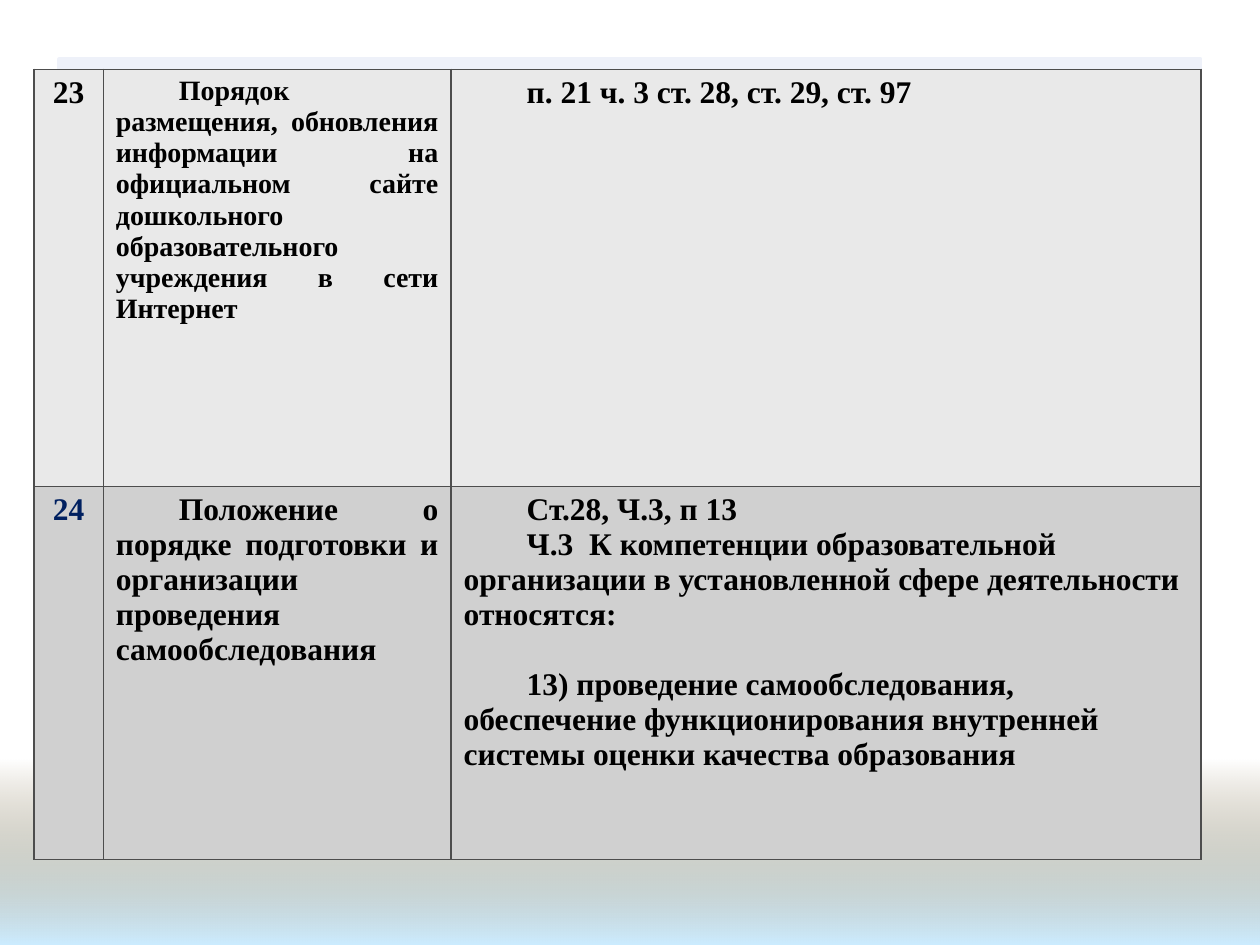
from dataclasses import dataclass

import pptx
import pptx.dml.color
import pptx.enum.dml
import pptx.enum.shapes
import pptx.enum.text
import pptx.oxml
import pptx.oxml.ns
import pptx.util
from pptx.util import Inches

CENTER = pptx.enum.text.PP_ALIGN.CENTER
JUSTIFY = pptx.enum.text.PP_ALIGN.JUSTIFY
LEFT = pptx.enum.text.PP_ALIGN.LEFT
SHAPES = pptx.enum.shapes.MSO_SHAPE


@dataclass
class Entry:
    text: str
    align: int = JUSTIFY
    size: int = 18
    color: str = "000000"
    indent: float = 0.5
    before: int = 0


@dataclass
class Regulation:
    height: float
    fill: str
    cells: list[list[Entry]]


COLUMN_WIDTHS = [0.55, 2.76, 5.95]
REGULATIONS = [
    Regulation(3.31, "E9E9E9", [
        [Entry("23", CENTER, indent=0)],
        [Entry("Порядок размещения, обновления информации на официальном сайте "
               "дошкольного образовательного учреждения в сети Интернет", size=16)],
        [Entry("п. 21 ч. 3 ст. 28, ст. 29, ст. 97")],
    ]),
    Regulation(2.96, "D0D0D0", [
        [Entry("24", CENTER, color="002060", indent=0)],
        [Entry("Положение о порядке подготовки и организации проведения самообследования")],
        [Entry("Ст.28, Ч.3, п 13"),
         Entry("Ч.3  К компетенции образовательной организации в установленной "
               "сфере деятельности относятся:", LEFT),
         Entry("13) проведение самообследования, обеспечение функционирования "
               "внутренней системы оценки качества образования", LEFT, before=20)],
    ]),
]


def rgb(value: str) -> pptx.dml.color.RGBColor:
    return pptx.dml.color.RGBColor.from_string(value)


def draw_horizon(slide) -> None:
    horizon = slide.shapes.add_shape(
        SHAPES.RECTANGLE, 0, Inches(6.03), Inches(10), Inches(1.47))
    horizon.shadow.inherit = False
    horizon.line.fill.background()
    horizon.fill.gradient()
    horizon.fill.gradient_angle = 270
    for stop, color, position in zip(
            horizon.fill.gradient_stops, ("765E2F", "CCECFF"), (0, 1)):
        stop.color.rgb = rgb(color)
        stop.position = position
    top_color = next(horizon._element.iter(pptx.oxml.ns.qn("a:srgbClr")))
    top_color.append(pptx.oxml.parse_xml(
        f'<a:alpha {pptx.oxml.ns.nsdecls("a")} val="0"/>'))


def draw_panel(slide) -> None:
    panel = slide.shapes.add_shape(
        SHAPES.FLOWCHART_PROCESS, Inches(0.47), Inches(0.47), Inches(9.06), Inches(6.25))
    panel.shadow.inherit = False
    panel.fill.solid()
    panel.fill.fore_color.rgb = rgb("EEF1F9")
    panel.line.color.rgb = rgb("EEF1F9")
    panel.line.width = pptx.util.Pt(2)


def add_borders(cell, color: str) -> None:
    properties = cell._tc.get_or_add_tcPr()
    for index, side in enumerate(("lnL", "lnR", "lnT", "lnB")):
        properties.insert(index, pptx.oxml.parse_xml(
            f'<a:{side} {pptx.oxml.ns.nsdecls("a")} w="12700"><a:solidFill>'
            f'<a:srgbClr val="{color}"/></a:solidFill></a:{side}>'))


def write_entry(paragraph, entry: Entry) -> None:
    paragraph.text = entry.text
    paragraph.alignment = entry.align
    if entry.before:
        paragraph.space_before = pptx.util.Pt(entry.before)
    properties = paragraph._p.get_or_add_pPr()
    properties.set("marL", "0")
    properties.set("indent", str(Inches(entry.indent)))
    for run in paragraph.runs:
        run.font.name = "Times New Roman"
        run.font.size = pptx.util.Pt(entry.size)
        run.font.bold = True
        run.font.color.rgb = rgb(entry.color)


def draw_regulations(slide, regulations: list[Regulation]) -> None:
    table = slide.shapes.add_table(
        len(regulations), len(COLUMN_WIDTHS), Inches(0.27), Inches(0.55),
        Inches(sum(COLUMN_WIDTHS)), Inches(sum(r.height for r in regulations))).table
    for column, width in zip(table.columns, COLUMN_WIDTHS):
        column.width = Inches(width)
    for row, regulation in zip(table.rows, regulations):
        row.height = Inches(regulation.height)
        for cell, entries in zip(row.cells, regulation.cells):
            cell.fill.solid()
            cell.fill.fore_color.rgb = rgb(regulation.fill)
            add_borders(cell, "4D4D4D")
            for index, entry in enumerate(entries):
                frame = cell.text_frame
                write_entry(frame.add_paragraph() if index else frame.paragraphs[0], entry)


def main() -> None:
    deck = pptx.Presentation()
    deck.slide_width, deck.slide_height = Inches(10), Inches(7.5)
    slide = deck.slides.add_slide(deck.slide_layouts[6])
    draw_horizon(slide)
    draw_panel(slide)
    draw_regulations(slide, REGULATIONS)
    deck.save("out.pptx")


if __name__ == "__main__":
    main()
